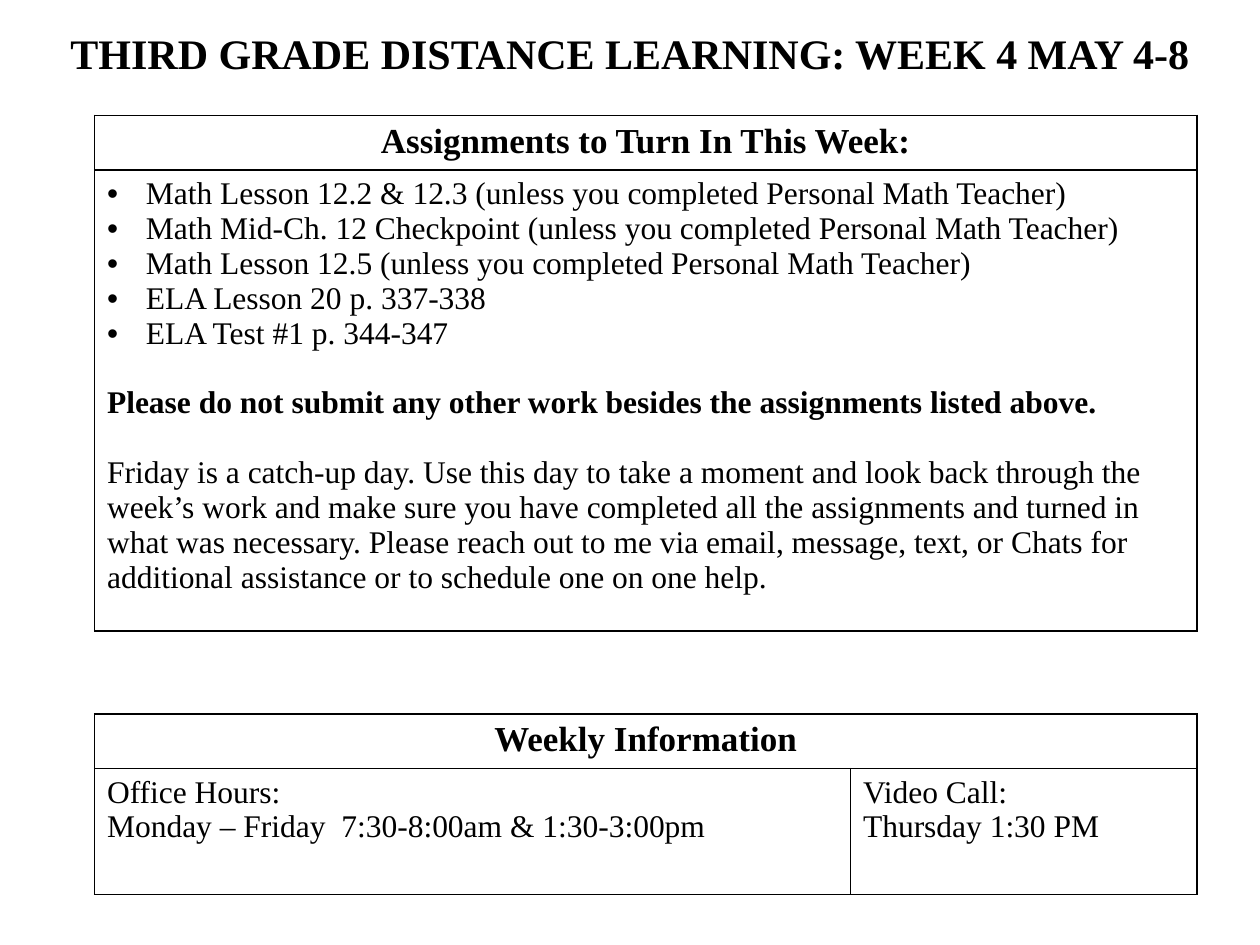
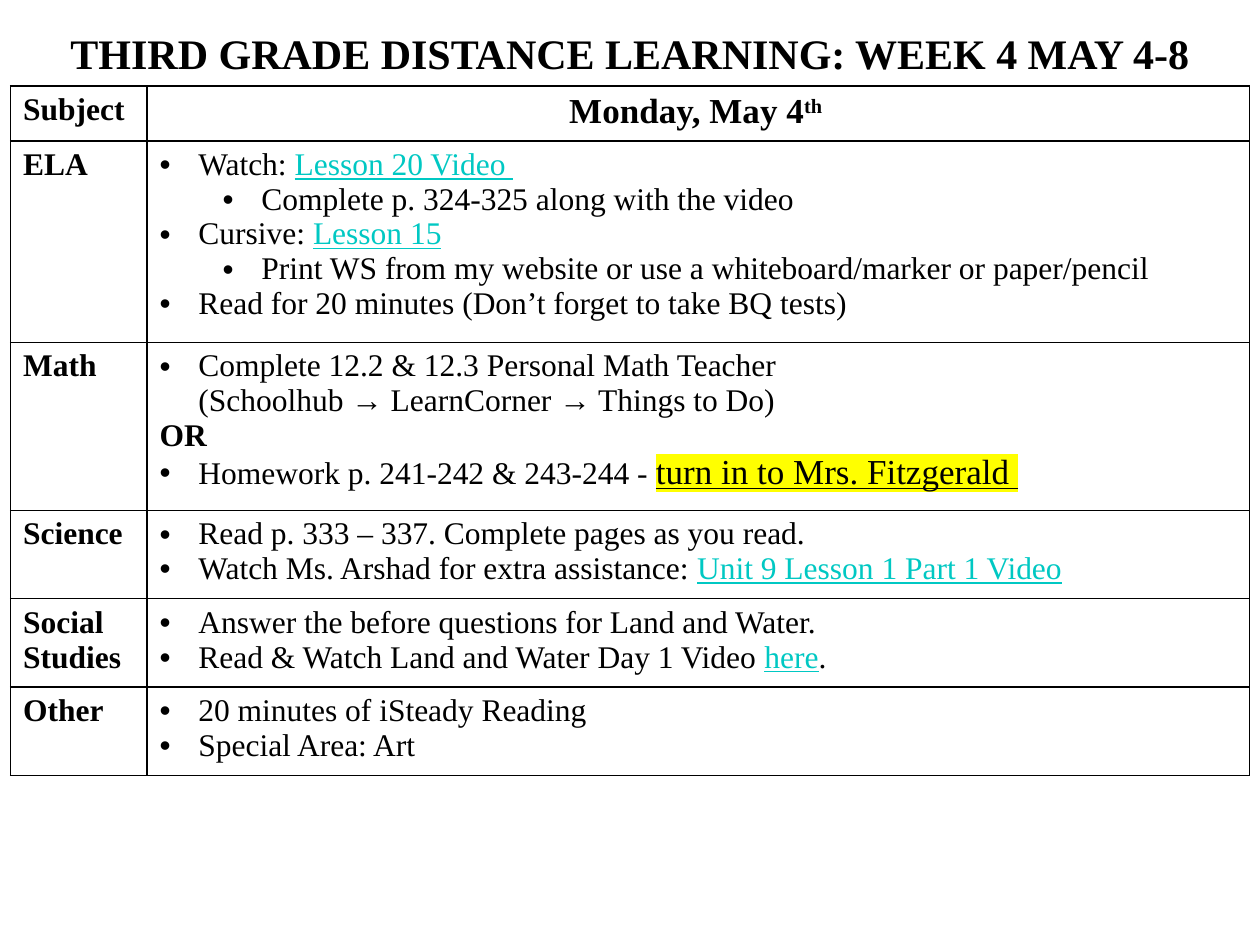
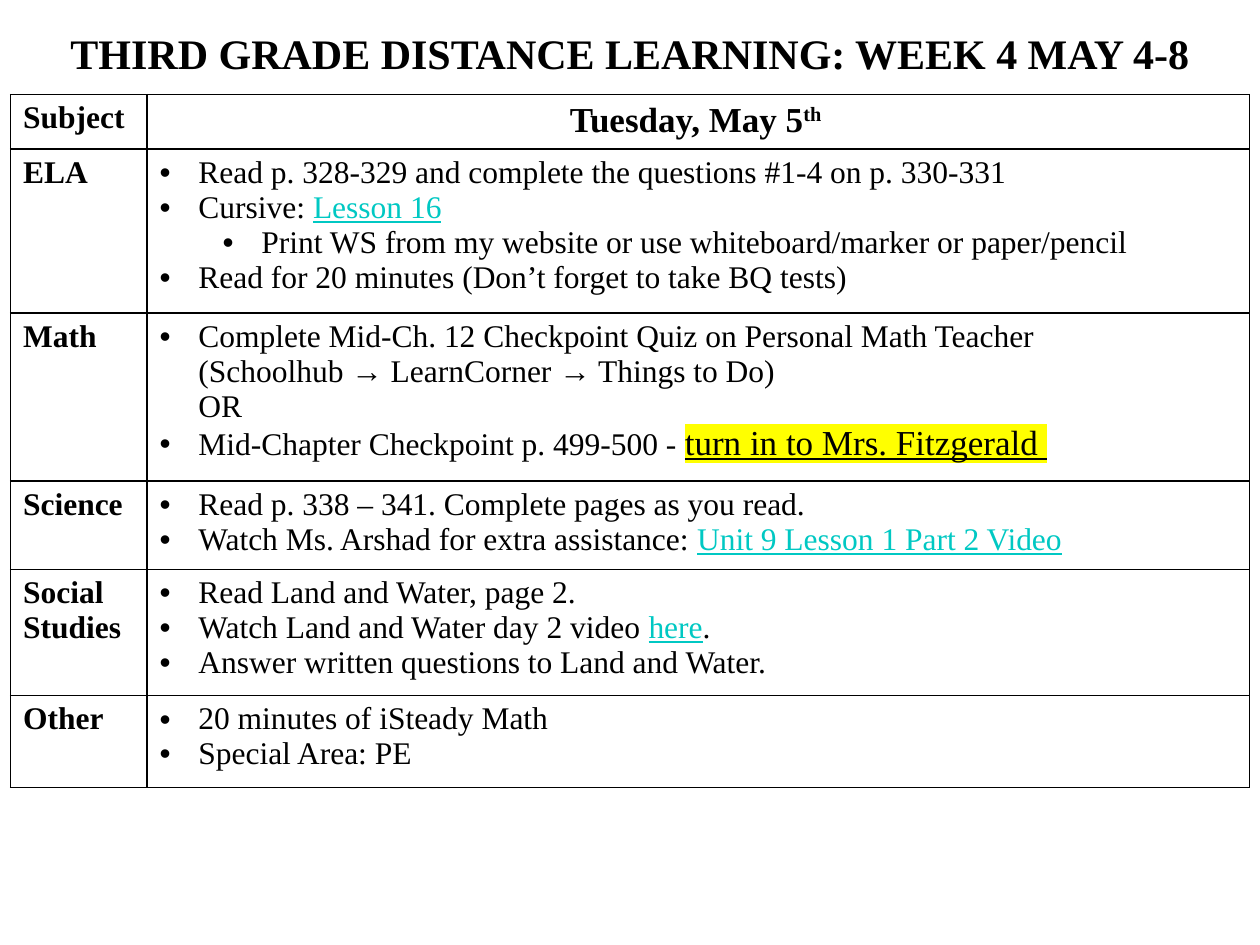
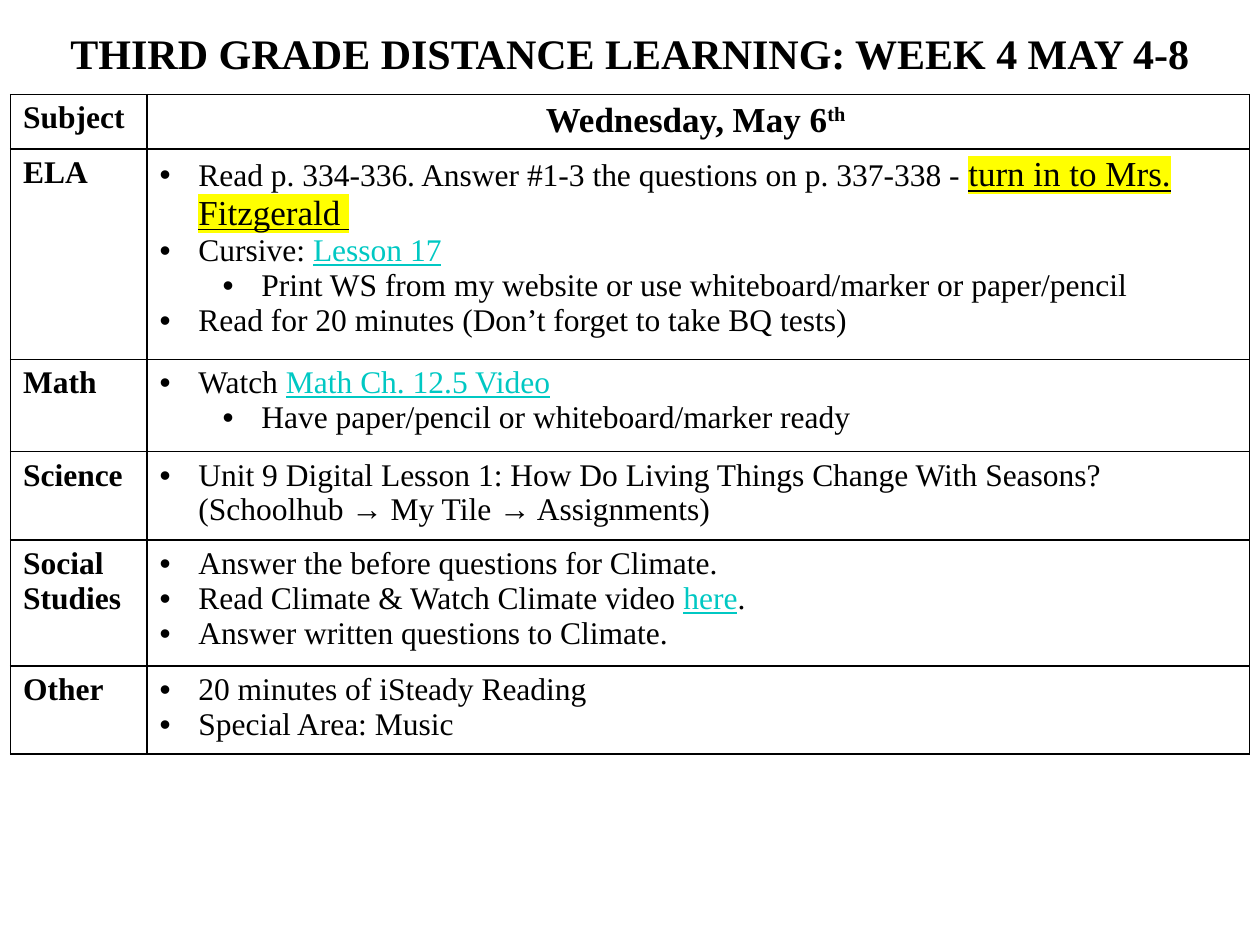
"""Build the weekly third grade distance learning plan."""
from lxml.etree import SubElement
from pptx import Presentation
from pptx.dml.color import RGBColor
from pptx.enum.text import MSO_ANCHOR, PP_ALIGN
from pptx.oxml import parse_xml
from pptx.oxml.ns import nsdecls, qn
from pptx.util import Pt

BLACK = RGBColor(0x00, 0x00, 0x00)
WHITE = RGBColor(0xFF, 0xFF, 0xFF)
TEAL = RGBColor(0x00, 0xC8, 0xC3)
YELLOW = RGBColor(0xFF, 0xFF, 0x00)
FONT = "Times New Roman"
PX = 7620
PAGE_WIDTH, PAGE_HEIGHT = 1200, 900
BULLET_HANG, LEVEL_STEP = 37, 60
LINE_GAP = Pt(20)

PLAIN, GAP, ITEM, SUB_ITEM = "plain", "gap", "item", "sub item"
LINK = {"color": TEAL, "underline": True}
TURN_IN = ("turn in to Mrs. Fitzgerald ", {"size": 20, "underline": True, "highlight": YELLOW})
BOLD = {"bold": True}
HEADING = {"bold": True, "size": 20}

TITLE = "THIRD GRADE DISTANCE LEARNING: WEEK 4 MAY 4-8"

ASSIGNMENTS = [
    (ITEM, "Math Lesson 12.2 & 12.3 (unless you completed Personal Math Teacher)"),
    (ITEM, "Math Mid-Ch. 12 Checkpoint (unless you completed Personal Math Teacher)"),
    (ITEM, "Math Lesson 12.5 (unless you completed Personal Math Teacher)"),
    (ITEM, "ELA Lesson 20 p. 337-338"),
    (ITEM, "ELA Test #1 p. 344-347"),
    (GAP, ("Please do not submit any other work besides the assignments listed above.", BOLD)),
    (GAP, "Friday is a catch-up day. Use this day to take a moment and look back through the "
          "week’s work and make sure you have completed all the assignments and turned in what "
          "was necessary. Please reach out to me via email, message, text, or Chats for "
          "additional assistance or to schedule one on one help."),
]
OFFICE_HOURS = [(PLAIN, "Office Hours:"), (PLAIN, "Monday – Friday  7:30-8:00am & 1:30-3:00pm")]
VIDEO_CALL = [(PLAIN, "Video Call:"), (PLAIN, "Thursday 1:30 PM")]

READING = (ITEM, "Read for 20 minutes (Don’t forget to take BQ tests)")
PRINT_SHEET = (SUB_ITEM, "Print WS from my website or use whiteboard/marker or paper/pencil")
MATH_STEPS = "(Schoolhub → LearnCorner → Things to Do)"

SUBJECTS = ["ELA", "Math", "Science", "Social Studies", "Other"]
DAYS = [
    ("Monday, May 4", 82, [192, 160, 84, 84, 84], [
        [(ITEM, "Watch: ", ("Lesson 20 Video ", LINK)),
         (SUB_ITEM, "Complete p. 324-325 along with the video"),
         (ITEM, "Cursive: ", ("Lesson 15", LINK)),
         (SUB_ITEM, "Print WS from my website or use a whiteboard/marker or paper/pencil"),
         READING],
        [(ITEM, "Complete 12.2 & 12.3 Personal Math Teacher\n" + MATH_STEPS),
         (PLAIN, ("OR", BOLD)),
         (ITEM, "Homework p. 241-242 & 243-244 - ", TURN_IN)],
        [(ITEM, "Read p. 333 – 337. Complete pages as you read."),
         (ITEM, "Watch Ms. Arshad for extra assistance: ", ("Unit 9 Lesson 1 Part 1 Video", LINK))],
        [(ITEM, "Answer the before questions for Land and Water."),
         (ITEM, "Read & Watch Land and Water Day 1 Video ", ("here", LINK), ".")],
        [(ITEM, "20 minutes of iSteady Reading"), (ITEM, "Special Area: Art")],
    ]),
    ("Tuesday, May 5", 90, [156, 160, 84, 120, 88], [
        [(ITEM, "Read p. 328-329 and complete the questions #1-4 on p. 330-331"),
         (ITEM, "Cursive: ", ("Lesson 16", LINK)),
         PRINT_SHEET,
         READING],
        [(ITEM, "Complete Mid-Ch. 12 Checkpoint Quiz on Personal Math Teacher\n"
                + MATH_STEPS + "\nOR"),
         (ITEM, "Mid-Chapter Checkpoint p. 499-500 - ", TURN_IN)],
        [(ITEM, "Read p. 338 – 341. Complete pages as you read."),
         (ITEM, "Watch Ms. Arshad for extra assistance: ", ("Unit 9 Lesson 1 Part 2 Video", LINK))],
        [(ITEM, "Read Land and Water, page 2."),
         (ITEM, "Watch Land and Water day 2 video ", ("here", LINK), "."),
         (ITEM, "Answer written questions to Land and Water.")],
        [(ITEM, "20 minutes of iSteady Math"), (ITEM, "Special Area: PE")],
    ]),
    ("Wednesday, May 6", 90, [200, 88, 84, 120, 84], [
        [(ITEM, "Read p. 334-336. Answer #1-3 the questions on p. 337-338 - ", TURN_IN),
         (ITEM, "Cursive: ", ("Lesson 17", LINK)),
         PRINT_SHEET,
         READING],
        [(ITEM, "Watch ", ("Math Ch. 12.5 Video", LINK)),
         (SUB_ITEM, "Have paper/pencil or whiteboard/marker ready")],
        [(ITEM, "Unit 9 Digital Lesson 1: How Do Living Things Change With Seasons?\n"
                "(Schoolhub → My Tile → Assignments)")],
        [(ITEM, "Answer the before questions for Climate."),
         (ITEM, "Read Climate & Watch Climate video ", ("here", LINK), "."),
         (ITEM, "Answer written questions to Climate.")],
        [(ITEM, "20 minutes of iSteady Reading"), (ITEM, "Special Area: Music")],
    ]),
]


def add_text(para, text, size=18, bold=False, color=BLACK, underline=False,
             highlight=None, raised=False):
    for number, line in enumerate(text.split("\n")):
        if number:
            para.add_line_break()
        span = para.add_run()
        span.text = line
        font = span.font
        font.size, font.bold, font.underline, font.name = Pt(size), bold, underline, FONT
        font.color.rgb = color
        properties = span._r.get_or_add_rPr()
        if raised:
            properties.set("baseline", "30000")
        if highlight is not None:
            mark = parse_xml(f'<a:highlight {nsdecls("a")}><a:srgbClr val="{highlight}"/></a:highlight>')
            properties.find(qn("a:solidFill")).addnext(mark)


def add_bullet(para, level):
    para.level = level
    properties = para._p.get_or_add_pPr()
    properties.set("marL", str((BULLET_HANG + level * LEVEL_STEP) * PX))
    properties.set("indent", str(-BULLET_HANG * PX))
    SubElement(properties, qn("a:buFont"), typeface="Arial")
    SubElement(properties, qn("a:buChar"), char="•")


def fill_frame(frame, paragraphs, align=PP_ALIGN.LEFT):
    for number, (kind, *spans) in enumerate(paragraphs):
        para = frame.add_paragraph() if number else frame.paragraphs[0]
        para.alignment = align
        if kind == GAP:
            para.space_before = LINE_GAP
        elif kind in (ITEM, SUB_ITEM):
            add_bullet(para, int(kind == SUB_ITEM))
        for span in spans:
            text, style = (span, {}) if isinstance(span, str) else span
            add_text(para, text, **style)


def style_cell(cell):
    cell.fill.solid()
    cell.fill.fore_color.rgb = WHITE
    properties = cell._tc.get_or_add_tcPr()
    for position, side in enumerate("LRTB"):
        border = parse_xml(
            f'<a:ln{side} {nsdecls("a")} w="{Pt(1)}"><a:solidFill>'
            f'<a:srgbClr val="{BLACK}"/></a:solidFill></a:ln{side}>')
        properties.insert(position, border)


def add_grid(page, left, top, widths, heights):
    frame = page.shapes.add_table(len(heights), len(widths), left * PX, top * PX,
                                  sum(widths) * PX, sum(heights) * PX)
    table = frame.table
    table.first_row = table.horz_banding = False
    for column, width in zip(table.columns, widths):
        column.width = width * PX
    for row, height in zip(table.rows, heights):
        row.height = height * PX
    for cell in table.iter_cells():
        style_cell(cell)
    return table


def add_page(deck):
    page = deck.slides.add_slide(deck.slide_layouts[6])
    box = page.shapes.add_textbox(0, 20 * PX, PAGE_WIDTH * PX, 60 * PX)
    box.text_frame.word_wrap = True
    box.text_frame.vertical_anchor = MSO_ANCHOR.MIDDLE
    fill_frame(box.text_frame, [(PLAIN, (TITLE, {"bold": True, "size": 24}))], PP_ALIGN.CENTER)
    return page


def add_overview(deck):
    page = add_page(deck)
    assignments = add_grid(page, 90, 110, [1050], [49, 410])
    information = add_grid(page, 90, 680, [720, 330], [52, 120])
    information.cell(0, 0).merge(information.cell(0, 1))
    for table, heading in ((assignments, "Assignments to Turn In This Week:"),
                           (information, "Weekly Information")):
        fill_frame(table.cell(0, 0).text_frame, [(PLAIN, (heading, HEADING))], PP_ALIGN.CENTER)
    fill_frame(assignments.cell(1, 0).text_frame, ASSIGNMENTS)
    fill_frame(information.cell(1, 0).text_frame, OFFICE_HOURS)
    fill_frame(information.cell(1, 1).text_frame, VIDEO_CALL)


def add_day(deck, day, top, heights, lessons):
    table = add_grid(add_page(deck), 10, top, [130, 1050], [52] + heights)
    date = [(PLAIN, (day, HEADING), ("th ", {**HEADING, "raised": True}))]
    fill_frame(table.cell(0, 1).text_frame, date, PP_ALIGN.CENTER)
    for row, subject in enumerate(["Subject"] + SUBJECTS):
        fill_frame(table.cell(row, 0).text_frame, [(PLAIN, (subject, BOLD))])
    for row, lesson in enumerate(lessons, start=1):
        fill_frame(table.cell(row, 1).text_frame, lesson)


def main():
    deck = Presentation()
    deck.slide_width, deck.slide_height = PAGE_WIDTH * PX, PAGE_HEIGHT * PX
    add_overview(deck)
    for day in DAYS:
        add_day(deck, *day)
    deck.save("out.pptx")


if __name__ == "__main__":
    main()
